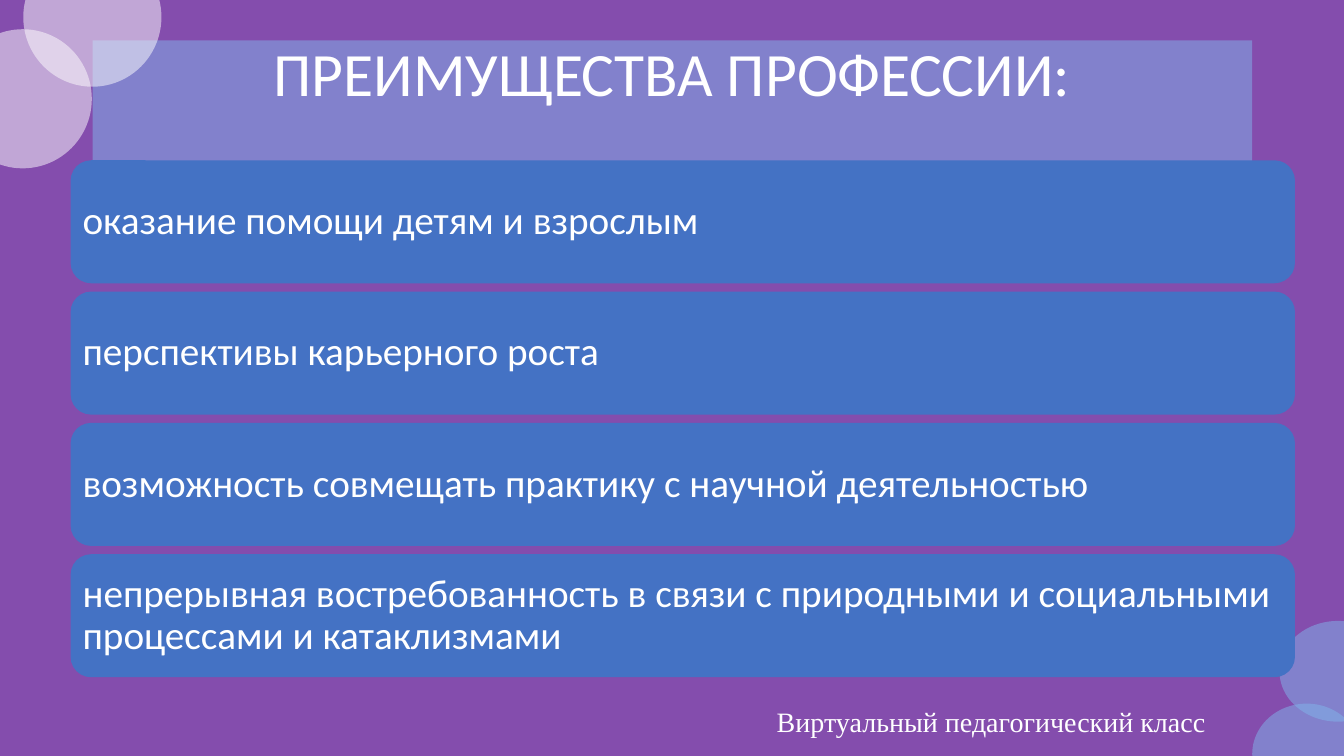
"""Build a slide listing the advantages of the profession."""
from lxml.etree import SubElement
from pptx import Presentation
from pptx.dml.color import RGBColor
from pptx.enum.shapes import MSO_SHAPE as Shape
from pptx.enum.text import MSO_ANCHOR as Anchor, MSO_AUTO_SIZE as AutoSize, PP_ALIGN as Align
from pptx.oxml.ns import qn
from pptx.util import Inches, Pt

WIDTH, HEIGHT = Inches(13.33), Inches(7.5)
PURPLE = RGBColor(0x84, 0x4D, 0xAD)
SKY = RGBColor(0x81, 0xB6, 0xEB)
BLUE = RGBColor(0x44, 0x72, 0xC4)
WHITE = RGBColor(0xFF, 0xFF, 0xFF)

BAR_LEFT, BAR_TOP, BAR_WIDTH, BAR_HEIGHT, BAR_STEP = 5.25, 21.2, 91.1, 16.27, 17.37
BAR_INSET = Inches(0.06)
ADVANTAGES = [
    "оказание помощи детям и взрослым",
    "перспективы карьерного роста",
    "возможность совмещать практику с научной деятельностью",
    "непрерывная востребованность в связи с природными и социальными процессами и катаклизмами",
]


def area(left, top, width, height):
    """Turn percentages of the slide's size into lengths."""
    return (int(WIDTH * left / 100), int(HEIGHT * top / 100),
            int(WIDTH * width / 100), int(HEIGHT * height / 100))


def paint(shape, color, opacity=100):
    """Fill a shape with one colour at an opacity in percent."""
    shape.fill.solid()
    shape.fill.fore_color.rgb = color
    if opacity < 100:
        color_element = shape.fill._xPr.find(qn("a:solidFill"))[0]
        SubElement(color_element, qn("a:alpha"), val=str(opacity * 1000))


def write(shape, text, size, font="Calibri", align=Align.LEFT, spacing=0.9):
    """Write one white paragraph, centred vertically in a shape."""
    frame = shape.text_frame
    frame.word_wrap = True
    frame.auto_size = AutoSize.NONE
    frame.vertical_anchor = Anchor.MIDDLE
    paragraph = frame.paragraphs[0]
    paragraph.alignment = align
    paragraph.line_spacing = spacing
    run = paragraph.add_run()
    run.text = text
    run.font.size = Pt(size)
    run.font.name = font
    run.font.color.rgb = WHITE
    return paragraph


def add_plain_shape(slide, kind, box, color, opacity=100):
    """Add a preset shape without line or shadow."""
    shape = slide.shapes.add_shape(kind, *area(*box))
    shape.shadow.inherit = False
    shape.line.fill.background()
    paint(shape, color, opacity)
    return shape


def add_title(slide, text):
    """Place the title on its translucent band, with an empty second line."""
    title = slide.shapes.title
    title.left, title.top, title.width, title.height = area(6.9, 5.33, 86.27, 19.33)
    paint(title, SKY, 50)
    write(title, text, 44, align=Align.CENTER).add_line_break()


def add_bar(slide, row, text):
    """Add one rounded bar of the list at its row."""
    box = (BAR_LEFT, BAR_TOP + row * BAR_STEP, BAR_WIDTH, BAR_HEIGHT)
    bar = add_plain_shape(slide, Shape.ROUNDED_RECTANGLE, box, BLUE)
    frame = bar.text_frame
    frame.margin_left = frame.margin_right = BAR_INSET
    frame.margin_top = frame.margin_bottom = BAR_INSET
    write(bar, text, 28)


def main():
    """Build and save the slide."""
    presentation = Presentation()
    presentation.slide_width, presentation.slide_height = WIDTH, HEIGHT
    slide = presentation.slides.add_slide(presentation.slide_layouts[5])
    slide.background.fill.solid()
    slide.background.fill.fore_color.rgb = PURPLE

    add_title(slide, "ПРЕИМУЩЕСТВА ПРОФЕССИИ:")
    for box, color in [
        ((93.17, 93.07, 8.1, 13.33), SKY),
        ((-3.45, 3.87, 10.28, 18.4), WHITE),
        ((1.73, -6.93, 10.28, 18.4), WHITE),
        ((95.2, 82.13, 8.7, 13.33), SKY),
    ]:
        add_plain_shape(slide, Shape.OVAL, box, color, 50)

    footer = slide.shapes.add_textbox(*area(54.39, 93.33, 38.71, 4.13))
    write(footer, "Виртуальный педагогический класс", 20, "Times New Roman", Align.CENTER, 1.0)
    for row, text in enumerate(ADVANTAGES):
        add_bar(slide, row, text)
    presentation.save("out.pptx")


if __name__ == "__main__":
    main()
